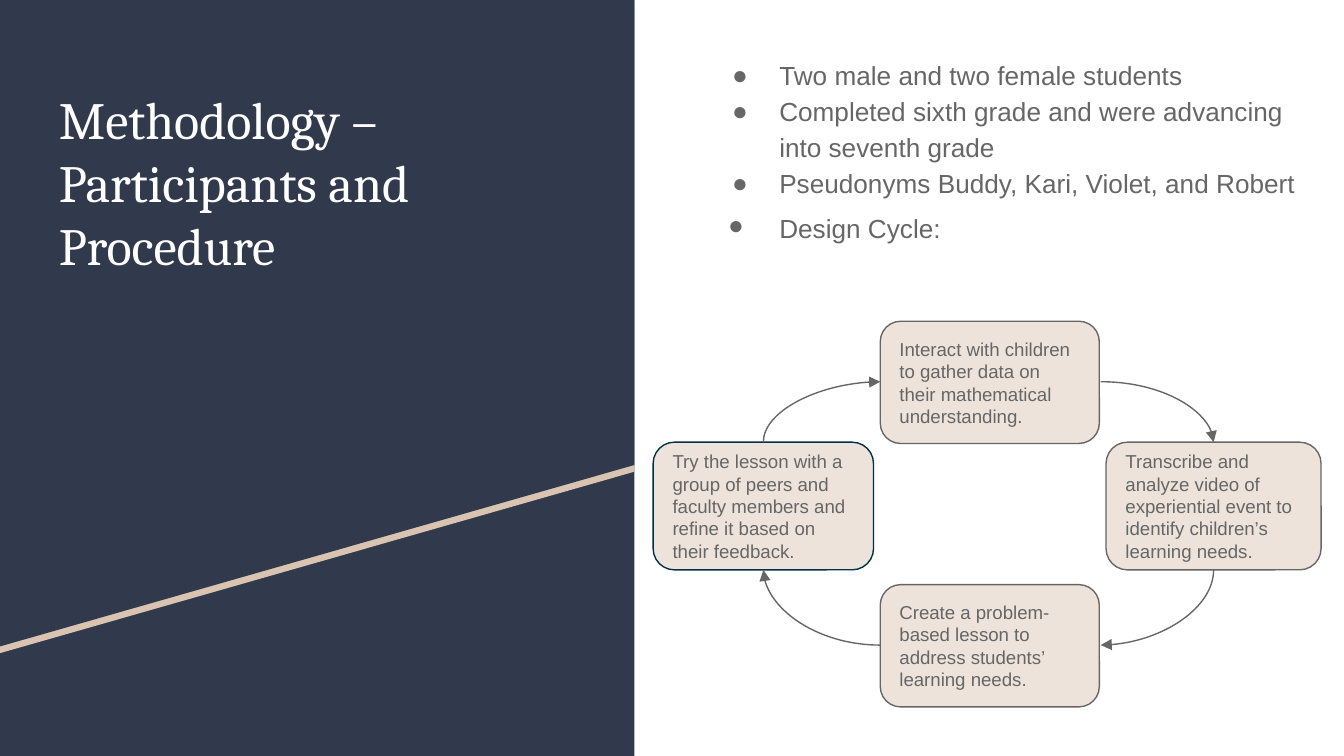
from dataclasses import dataclass

from lxml import etree
from pptx import Presentation
from pptx.dml.color import RGBColor
from pptx.enum.shapes import MSO_CONNECTOR, MSO_SHAPE
from pptx.enum.text import MSO_ANCHOR, PP_ALIGN
from pptx.oxml.ns import qn
from pptx.util import Inches, Pt

CURVE = MSO_CONNECTOR.CURVE
RECT, ROUNDED = MSO_SHAPE.RECTANGLE, MSO_SHAPE.ROUNDED_RECTANGLE
TOP, MIDDLE = MSO_ANCHOR.TOP, MSO_ANCHOR.MIDDLE
LEFT = PP_ALIGN.LEFT

COLORS = {
    "navy": "31394D",
    "tan": "D9C4B1",
    "cream": "EDE3DA",
    "gray": "666666",
    "deep_blue": "002F4A",
    "white": "FFFFFF",
}
FONTS = {
    "title": {"name": "Cambria", "size": Pt(28), "color": "white"},
    "body": {"name": "Arial", "size": Pt(14), "color": "gray"},
    "spacer": {"name": "Arial", "size": Pt(18), "color": "gray"},
    "step": {"name": "Arial", "size": Pt(10), "color": "gray"},
}
FRAME = {"word_wrap": True} | {
    f"margin_{side}": Inches(0.1) for side in ("left", "top", "right", "bottom")
}
PANEL_WIDTH = 4.72


@dataclass(frozen=True)
class Step:
    text: str
    left: float
    top: float
    width: float
    height: float
    outline: str = "gray"


@dataclass(frozen=True)
class Arrow:
    start: tuple[float, float]
    end: tuple[float, float]
    rotation: int


@dataclass(frozen=True)
class Bullet:
    text: str
    hanging: float = 0.35
    spacer: str = ""


BULLETS = [
    Bullet("Two male and two female students"),
    Bullet("Completed sixth grade and were advancing into seventh grade"),
    Bullet("Pseudonyms Buddy, Kari, Violet, and Robert"),
    Bullet("Design Cycle:", 0.38, " "),
]
STEPS = [
    Step("Interact with children to gather data on their mathematical understanding.",
         6.55, 2.39, 1.63, 0.91),
    Step("Transcribe and analyze video of experiential event to identify "
         "children’s learning needs.", 8.23, 3.29, 1.6, 0.95),
    Step("Create a problem-based lesson to address students’ learning needs.",
         6.55, 4.35, 1.63, 0.91),
    Step("Try the lesson with a group of peers and faculty members and refine it "
         "based on their feedback.", 4.86, 3.29, 1.64, 0.95, "deep_blue"),
]
ARROWS = [
    Arrow((8.19, 2.84), (9.03, 3.29), 0),
    Arrow((9.03, 4.24), (8.19, 4.8), 90),
    Arrow((6.55, 4.8), (5.68, 4.24), 180),
    Arrow((5.68, 3.29), (6.55, 2.84), 270),
]


def rgb(name: str) -> RGBColor:
    return RGBColor.from_string(COLORS[name])


def set_attrs(obj, values: dict) -> None:
    for name, value in values.items():
        setattr(obj, name, value)


def add_run(p, text: str, style: str) -> None:
    r = p.add_run()
    r.text = text
    values = dict(FONTS[style])
    r.font.color.rgb = rgb(values.pop("color"))
    set_attrs(r.font, values)


def fill_plain(sp, color: str) -> None:
    sp.shadow.inherit = False
    sp.fill.solid()
    sp.fill.fore_color.rgb = rgb(color)
    sp.line.fill.background()


def add_band(slide, points: list[tuple[float, float]], color: str) -> None:
    corners = [(Inches(x), Inches(y)) for x, y in points]
    builder = slide.shapes.build_freeform(*corners[0], scale=1.0)
    builder.add_line_segments(corners[1:], close=True)
    fill_plain(builder.convert_to_shape(), color)


def add_text_box(slide, left: float, top: float, width: float, height: float):
    box = slide.shapes.add_textbox(*map(Inches, (left, top, width, height)))
    set_attrs(box.text_frame, FRAME | {"vertical_anchor": TOP})
    return box.text_frame


def add_bullets(tf, bullets: list[Bullet]) -> None:
    for i, bullet in enumerate(bullets):
        p = tf.add_paragraph() if i else tf.paragraphs[0]
        p.line_spacing = 1.15
        ppr = p._p.get_or_add_pPr()
        ppr.set("marL", str(Inches(0.5)))
        ppr.set("indent", str(-Inches(bullet.hanging)))
        color = etree.SubElement(ppr, qn("a:buClr"))
        etree.SubElement(color, qn("a:srgbClr"), val=COLORS["gray"])
        etree.SubElement(ppr, qn("a:buSzPts"), val="1400")
        etree.SubElement(ppr, qn("a:buFont"), typeface="Arial")
        etree.SubElement(ppr, qn("a:buChar"), char="●")
        add_run(p, bullet.text, "body")
        if bullet.spacer:
            add_run(p, bullet.spacer, "spacer")


def add_step(slide, step: Step) -> None:
    bounds = map(Inches, (step.left, step.top, step.width, step.height))
    sp = slide.shapes.add_shape(ROUNDED, *bounds)
    fill_plain(sp, "cream")
    sp.line.color.rgb = rgb(step.outline)
    sp.line.width = Pt(0.75)
    set_attrs(sp.text_frame, FRAME | {"vertical_anchor": MIDDLE})
    p = sp.text_frame.paragraphs[0]
    p.alignment = LEFT
    add_run(p, step.text, "step")


def add_arrow(slide, arrow: Arrow) -> None:
    (x1, y1), (x2, y2) = arrow.start, arrow.end
    width, height = abs(x2 - x1), abs(y2 - y1)
    if arrow.rotation % 180:
        width, height = height, width
    left, top = (x1 + x2 - width) / 2, (y1 + y2 - height) / 2
    cx = slide.shapes.add_connector(
        CURVE, *map(Inches, (left, top, left + width, top + height)))
    cx.line.color.rgb = rgb("gray")
    cx.line.width = Pt(0.75)
    sppr = cx._element.spPr
    sppr.find(qn("a:xfrm")).set("rot", str(arrow.rotation * 60000))
    sppr.find(qn("a:prstGeom")).set("prst", "curvedConnector2")
    etree.SubElement(sppr.find(qn("a:ln")), qn("a:tailEnd"), type="triangle")
    etree.SubElement(sppr, qn("a:effectLst"))


def main() -> None:
    prs = Presentation()
    prs.slide_width, prs.slide_height = Inches(10), Inches(10 * 9 / 16)
    slide = prs.slides.add_slide(prs.slide_layouts[6])

    panel = slide.shapes.add_shape(RECT, 0, 0, Inches(PANEL_WIDTH), prs.slide_height)
    fill_plain(panel, "navy")
    for offset, color in ((0.05, "tan"), (0, "navy")):
        add_band(slide, [(0, offset), (PANEL_WIDTH, offset),
                         (PANEL_WIDTH, 3.46 + offset), (0, 4.81 + offset)], color)

    title = add_text_box(slide, 0.34, 0.55, 4.05, 2.74)
    add_run(title.paragraphs[0], "Methodology – Participants and Procedure", "title")
    add_bullets(add_text_box(slide, 5.2, 0.31, 4.56, 4.71), BULLETS)

    for step in STEPS:
        add_step(slide, step)
    for arrow in ARROWS:
        add_arrow(slide, arrow)
    prs.save("out.pptx")


if __name__ == "__main__":
    main()
